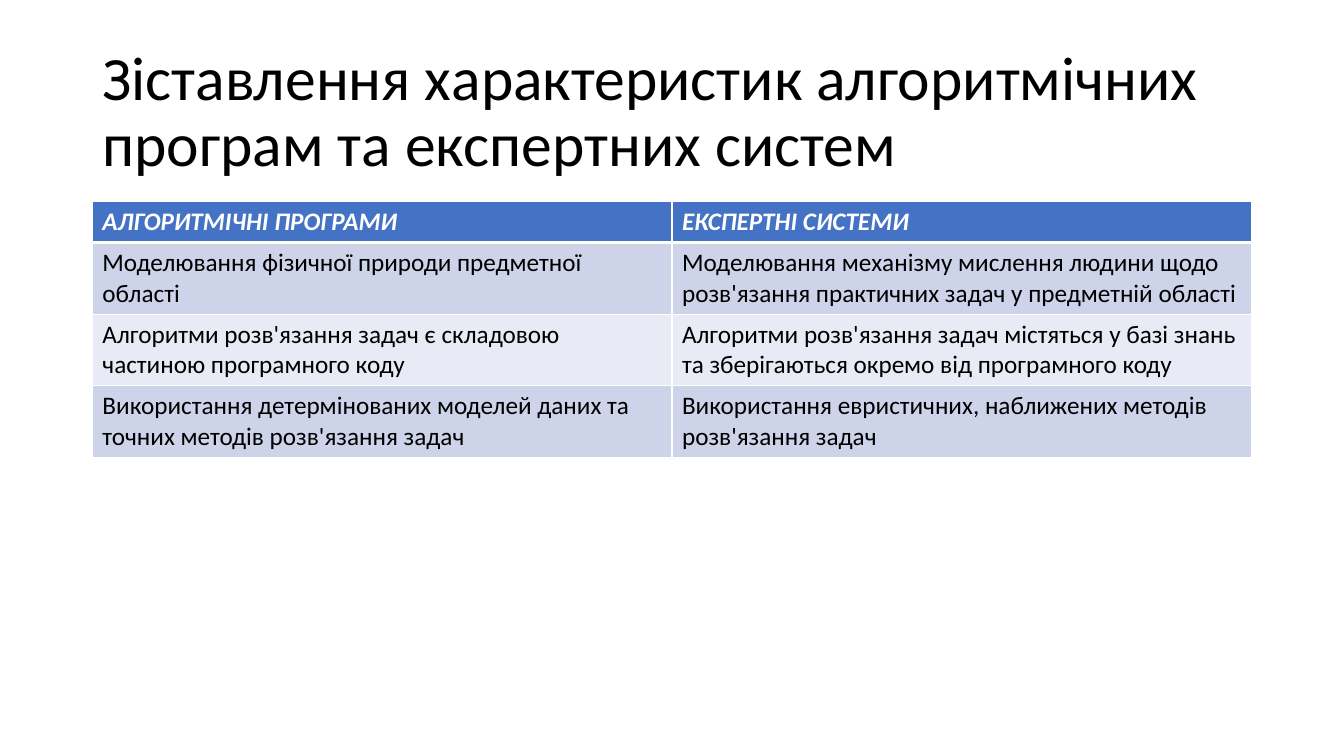
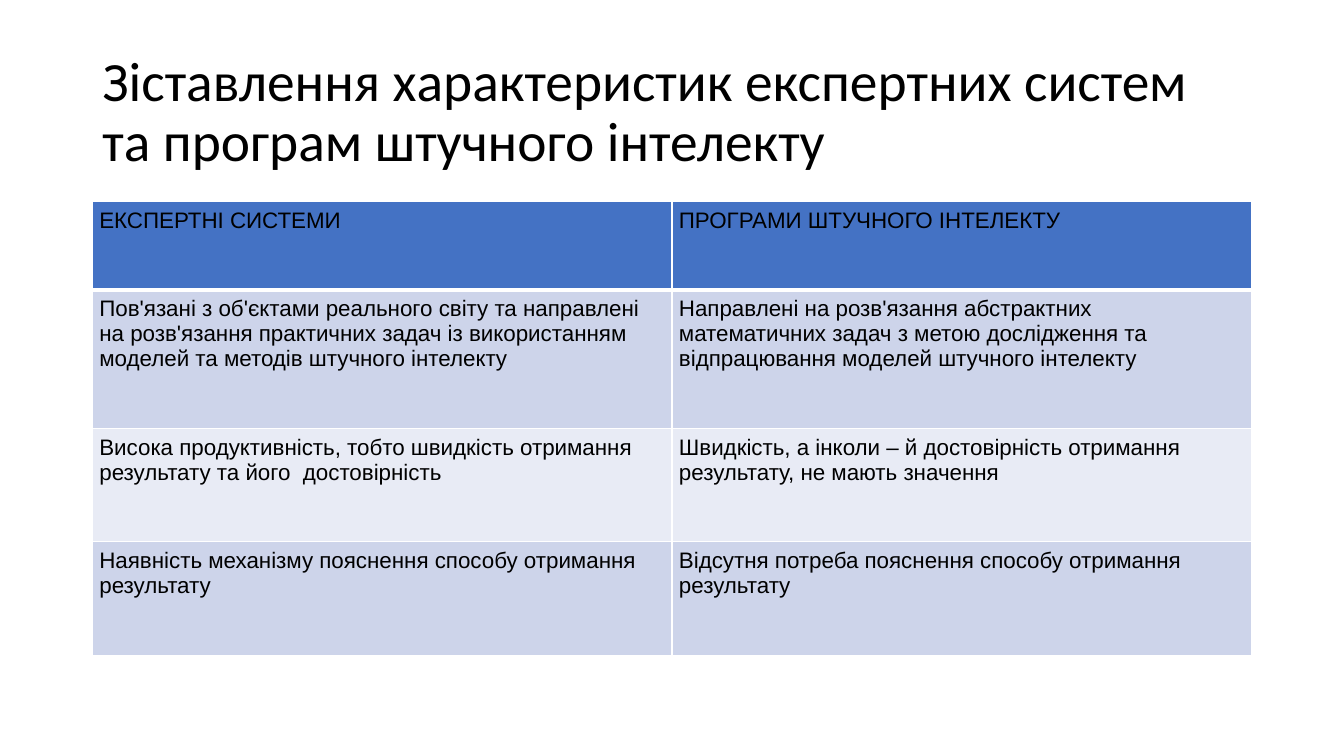
from dataclasses import dataclass

from lxml import etree
from pptx import Presentation
from pptx.dml import color
from pptx.enum import text
from pptx.oxml import ns
from pptx.util import Pt


@dataclass(frozen=True)
class Theme:
    # Colours
    header_fill: str = "4472C4"
    row_fills: tuple = ("CDD4EA", "E8EBF5")
    dark: str = "000000"
    light: str = "FFFFFF"
    # Type
    title_font: str = "Calibri"
    title_size: float = 44
    small_title_size: float = 39.6
    # Lines
    border: float = 1
    header_border: float = 3


@dataclass(frozen=True)
class TableStyle:
    font: str
    size: float
    side_margin: float
    top_margin: float
    header_color: str
    header_emphasis: bool


THEME = Theme()
PLAIN = TableStyle("Calibri", 18, 7.2, 3.6, THEME.light, True)
SPACIOUS = TableStyle("Arial", 16, 5, 5, THEME.dark, False)

LEFT, WIDTH = 66, 828
TITLE_TOP, TITLE_HEIGHT = 28.8, 104.4
TABLE_TOP = 144


def set_font(paragraph, name, size, rgb, emphasis=False):
    font = paragraph.font
    font.name, font.size = name, Pt(size)
    font.bold = font.italic = emphasis
    font.color.rgb = color.RGBColor.from_string(rgb)


class Deck:
    def __init__(self, theme):
        self.theme = theme
        self.presentation = Presentation()
        self.presentation.slide_width = Pt(960)
        self.presentation.slide_height = Pt(540)
        self.slide = None

    def add_slide(self, title, size):
        layout = self.presentation.slide_layouts[5]
        self.slide = self.presentation.slides.add_slide(layout)
        shape = self.slide.shapes.title
        shape.left, shape.top = Pt(LEFT), Pt(TITLE_TOP)
        shape.width, shape.height = Pt(WIDTH), Pt(TITLE_HEIGHT)
        frame = shape.text_frame
        frame.text = title
        frame.word_wrap = True
        frame.auto_size = text.MSO_AUTO_SIZE.NONE
        frame.vertical_anchor = text.MSO_ANCHOR.MIDDLE
        paragraph = frame.paragraphs[0]
        paragraph.alignment = text.PP_ALIGN.LEFT
        paragraph.line_spacing = 0.9
        set_font(paragraph, self.theme.title_font, size, self.theme.dark)

    def add_table(self, rows, heights, style):
        columns = len(rows[0])
        table = self.slide.shapes.add_table(
            len(rows), columns, Pt(LEFT), Pt(TABLE_TOP), Pt(WIDTH), Pt(sum(heights))
        ).table
        for column in table.columns:
            column.width = Pt(WIDTH / columns)
        for row_index, (row, height) in enumerate(zip(rows, heights)):
            table.rows[row_index].height = Pt(height)
            for column_index, wording in enumerate(row):
                cell = table.cell(row_index, column_index)
                self.format_cell(cell, wording, row_index, style)

    def format_cell(self, cell, wording, row_index, style):
        theme = self.theme
        is_header = row_index == 0
        cell.text = wording
        cell.margin_left = cell.margin_right = Pt(style.side_margin)
        cell.margin_top = cell.margin_bottom = Pt(style.top_margin)
        set_font(
            cell.text_frame.paragraphs[0], style.font, style.size,
            style.header_color if is_header else theme.dark,
            is_header and style.header_emphasis,
        )
        # Borders come before the fill in the cell properties
        top = theme.header_border if row_index == 1 else theme.border
        bottom = theme.header_border if is_header else theme.border
        self.add_borders(cell, L=theme.border, R=theme.border, T=top, B=bottom)
        fill = theme.header_fill if is_header else theme.row_fills[(row_index - 1) % 2]
        cell.fill.solid()
        cell.fill.fore_color.rgb = color.RGBColor.from_string(fill)

    def add_borders(self, cell, **widths):
        properties = cell._tc.get_or_add_tcPr()
        for side, width in widths.items():
            line = etree.SubElement(properties, ns.qn(f"a:ln{side}"), w=str(Pt(width)))
            fill = etree.SubElement(line, ns.qn("a:solidFill"))
            etree.SubElement(fill, ns.qn("a:srgbClr"), val=self.theme.light)


def main():
    deck = Deck(THEME)

    # Algorithmic programs and expert systems
    deck.add_slide(
        "Зіставлення характеристик алгоритмічних програм та експертних систем",
        THEME.title_size,
    )
    deck.add_table(
        [
            ("АЛГОРИТМІЧНІ ПРОГРАМИ", "ЕКСПЕРТНІ СИСТЕМИ"),
            ("Моделювання фізичної природи предметної області",
             "Моделювання механізму мислення людини щодо розв'язання практичних задач "
             "у предметній області"),
            ("Алгоритми розв'язання задач є складовою частиною програмного коду",
             "Алгоритми розв'язання задач містяться у базі знань та зберігаються окремо "
             "від програмного коду"),
            ("Використання детермінованих моделей даних та точних методів "
             "розв'язання задач",
             "Використання евристичних, наближених методів розв'язання задач"),
        ],
        [29.2, 51, 51, 51],
        PLAIN,
    )

    # Expert systems and artificial intelligence programs
    deck.add_slide(
        "Зіставлення характеристик експертних систем\vта програм штучного інтелекту",
        THEME.small_title_size,
    )
    deck.add_table(
        [
            ("ЕКСПЕРТНІ СИСТЕМИ", "ПРОГРАМИ ШТУЧНОГО ІНТЕЛЕКТУ"),
            ("Пов'язані з об'єктами реального світу та направлені на розв'язання "
             "практичних задач із використанням моделей та методів штучного інтелекту",
             "Направлені на розв'язання абстрактних математичних задач з метою "
             "дослідження та відпрацювання моделей штучного інтелекту"),
            ("Висока продуктивність, тобто швидкість отримання результату "
             "та його  достовірність",
             "Швидкість, а інколи – й достовірність отримання результату, "
             "не мають значення"),
            ("Наявність механізму пояснення способу отримання результату",
             "Відсутня потреба пояснення способу отримання результату"),
        ],
        [63, 99, 81, 81],
        SPACIOUS,
    )

    deck.presentation.save("out.pptx")


if __name__ == "__main__":
    main()
